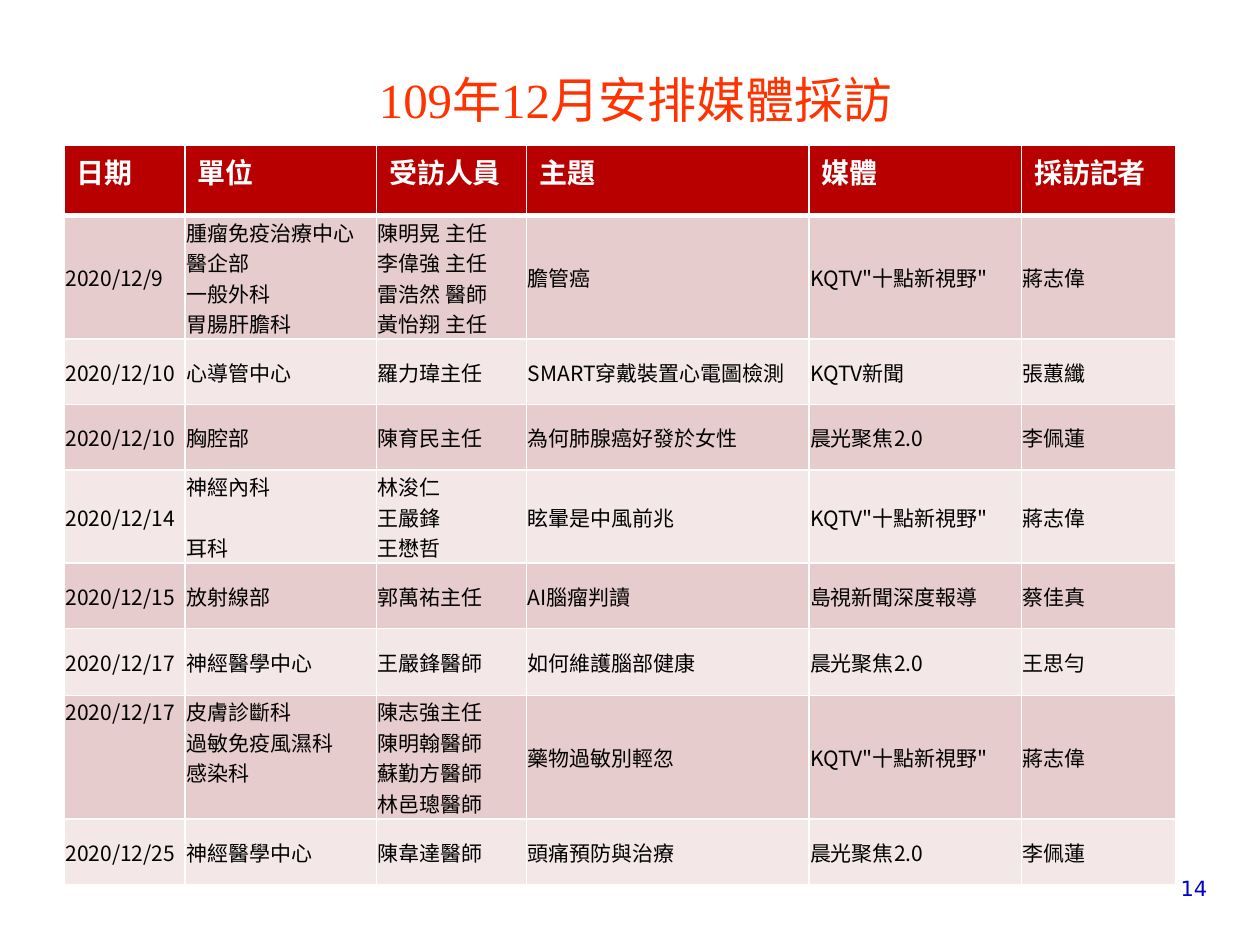
from lxml import etree
from pptx import Presentation
from pptx.dml.color import RGBColor
from pptx.enum.text import MSO_ANCHOR, PP_ALIGN
from pptx.oxml.ns import qn
from pptx.util import Inches, Pt

TOP, MIDDLE, BOTTOM = MSO_ANCHOR.TOP, MSO_ANCHOR.MIDDLE, MSO_ANCHOR.BOTTOM
LEFT, CENTER, RIGHT = PP_ALIGN.LEFT, PP_ALIGN.CENTER, PP_ALIGN.RIGHT
JUSTIFY = PP_ALIGN.JUSTIFY

COLORS = {
    "title": "FF3300",
    "number": "0000CC",
    "header": "B90000",
    "odd_row": "E6CCCC",
    "even_row": "F3E7E7",
    "white": "FFFFFF",
    "black": "000000",
}
HEADER_FONT = "Noto Sans CJK SC"
BODY_FONT = "Noto Sans CJK TC"

COLUMN_WIDTHS = [0.96, 1.52, 1.19, 2.24, 1.69, 1.22]
# Rows with three or four lines of text are taller
ROW_HEIGHTS = [0.56, 0.98, 0.52, 0.52, 0.74, 0.52, 0.53, 0.98, 0.52]
LINE_GAP = 17.4  # one empty line of 12 pt text
TOP_ANCHORED = {(7, 0), (7, 1), (7, 2)}

HEADERS = ["日期", "單位", "受訪人員", "主題", "媒體", "採訪記者"]
# A line feed breaks a line; a double one starts a spaced paragraph
INTERVIEWS = [
    ["2020/12/9", "腫瘤免疫治療中心 \n醫企部\n一般外科\n胃腸肝膽科",
     "陳明晃 主任 \n李偉強 主任\n雷浩然 醫師\n黃怡翔 主任",
     "膽管癌", 'KQTV"十點新視野"', "蔣志偉"],
    ["2020/12/10", "心導管中心", "羅力瑋主任",
     "SMART穿戴裝置心電圖檢測", "KQTV新聞", "張蕙纖"],
    ["2020/12/10", "胸腔部", "陳育民主任",
     "為何肺腺癌好發於女性", "晨光聚焦2.0", "李佩蓮"],
    ["2020/12/14", "神經內科\n\n耳科", "林浚仁\n王嚴鋒\n王懋哲",
     "眩暈是中風前兆", 'KQTV"十點新視野"', "蔣志偉"],
    ["2020/12/15", "放射線部", "郭萬祐主任",
     "AI腦瘤判讀", "島視新聞深度報導", "蔡佳真"],
    ["2020/12/17", "神經醫學中心", "王嚴鋒醫師",
     "如何維護腦部健康", "晨光聚焦2.0", "王思勻"],
    ["2020/12/17", "皮膚診斷科\n過敏免疫風濕科\n感染科",
     "陳志強主任\n陳明翰醫師\n蘇勤方醫師\n林邑璁醫師",
     "藥物過敏別輕忽", 'KQTV"十點新視野"', "蔣志偉"],
    ["2020/12/25", "神經醫學中心", "陳韋達醫師",
     "頭痛預防與治療", "晨光聚焦2.0", "李佩蓮"],
]


def add_run(paragraph, text, size, font, color, bold=False, asian_font=None):
    run = paragraph.add_run()
    run.text = text
    run.font.size = Pt(size)
    run.font.name = font
    run.font.bold = bold
    run.font.color.rgb = RGBColor.from_string(COLORS[color])
    east_asian = etree.SubElement(run.font._element, qn("a:ea"))
    east_asian.set("typeface", asian_font or font)


def add_break(paragraph, size):
    paragraph.add_line_break()
    etree.SubElement(paragraph._p[-1], qn("a:rPr"), sz=str(size * 100))


def write_text(text_frame, text, alignment, **style):
    for index, block in enumerate(text.split("\n\n")):
        if index == 0:
            paragraph = text_frame.paragraphs[0]
        else:
            paragraph = text_frame.add_paragraph()
            paragraph.space_before = Pt(LINE_GAP)
        paragraph.alignment = alignment
        for number, line in enumerate(block.split("\n")):
            if number:
                add_break(paragraph, style["size"])
            add_run(paragraph, line, **style)


def add_label(slide, left, top, width, height, text, anchor, alignment, **style):
    shape = slide.shapes.add_textbox(
        Inches(left), Inches(top), Inches(width), Inches(height))
    text_frame = shape.text_frame
    text_frame.word_wrap = True
    text_frame.vertical_anchor = anchor
    write_text(text_frame, text, alignment, **style)


def set_borders(cell, **widths):
    properties = cell._tc.get_or_add_tcPr()
    for index, side in enumerate(("L", "R", "T", "B")):
        line = etree.Element(qn(f"a:ln{side}"), w=str(Pt(widths.get(side, 1))))
        fill = etree.SubElement(line, qn("a:solidFill"))
        etree.SubElement(fill, qn("a:srgbClr"), val=COLORS["white"])
        properties.insert(index, line)


def fill_cell(cell, color):
    cell.fill.solid()
    cell.fill.fore_color.rgb = RGBColor.from_string(COLORS[color])


def fill_header_cell(cell, text):
    fill_cell(cell, "header")
    set_borders(cell, B=3)
    write_text(cell.text_frame, text, JUSTIFY, size=16, font=HEADER_FONT,
               color="white", bold=True)


def fill_body_cell(cell, text, row, column):
    fill_cell(cell, "odd_row" if row % 2 else "even_row")
    set_borders(cell, T=3 if row == 1 else 1)
    cell.margin_left = cell.margin_right = cell.margin_top = Inches(0.01)
    cell.margin_bottom = 0
    cell.vertical_anchor = TOP if (row, column) in TOP_ANCHORED else MIDDLE
    write_text(cell.text_frame, text, LEFT, size=12, font=BODY_FONT, color="black")


def add_schedule(slide):
    table = slide.shapes.add_table(
        len(ROW_HEIGHTS), len(HEADERS), Inches(0.51), Inches(1.15),
        Inches(sum(COLUMN_WIDTHS)), Inches(sum(ROW_HEIGHTS))).table
    for column, width in zip(table.columns, COLUMN_WIDTHS):
        column.width = Inches(width)
    for row, height in zip(table.rows, ROW_HEIGHTS):
        row.height = Inches(height)

    for column, text in enumerate(HEADERS):
        fill_header_cell(table.cell(0, column), text)
    for row, interview in enumerate(INTERVIEWS, start=1):
        for column, text in enumerate(interview):
            fill_body_cell(table.cell(row, column), text, row, column)


def main():
    presentation = Presentation()
    presentation.slide_width = Inches(10)
    presentation.slide_height = Inches(7.5)
    slide = presentation.slides.add_slide(presentation.slide_layouts[6])

    # Title
    add_label(slide, 0.67, 0.75, 8.75, 0.32, "109年12月安排媒體採訪",
              BOTTOM, CENTER, size=28, font="Times New Roman", color="title",
              asian_font=BODY_FONT)
    # Interview schedule
    add_schedule(slide)
    # Page number
    add_label(slide, 8.94, 6.9, 0.74, 0.3, "14", TOP, RIGHT,
              size=12, font="DejaVu Sans", color="number")

    presentation.save("out.pptx")


if __name__ == "__main__":
    main()
